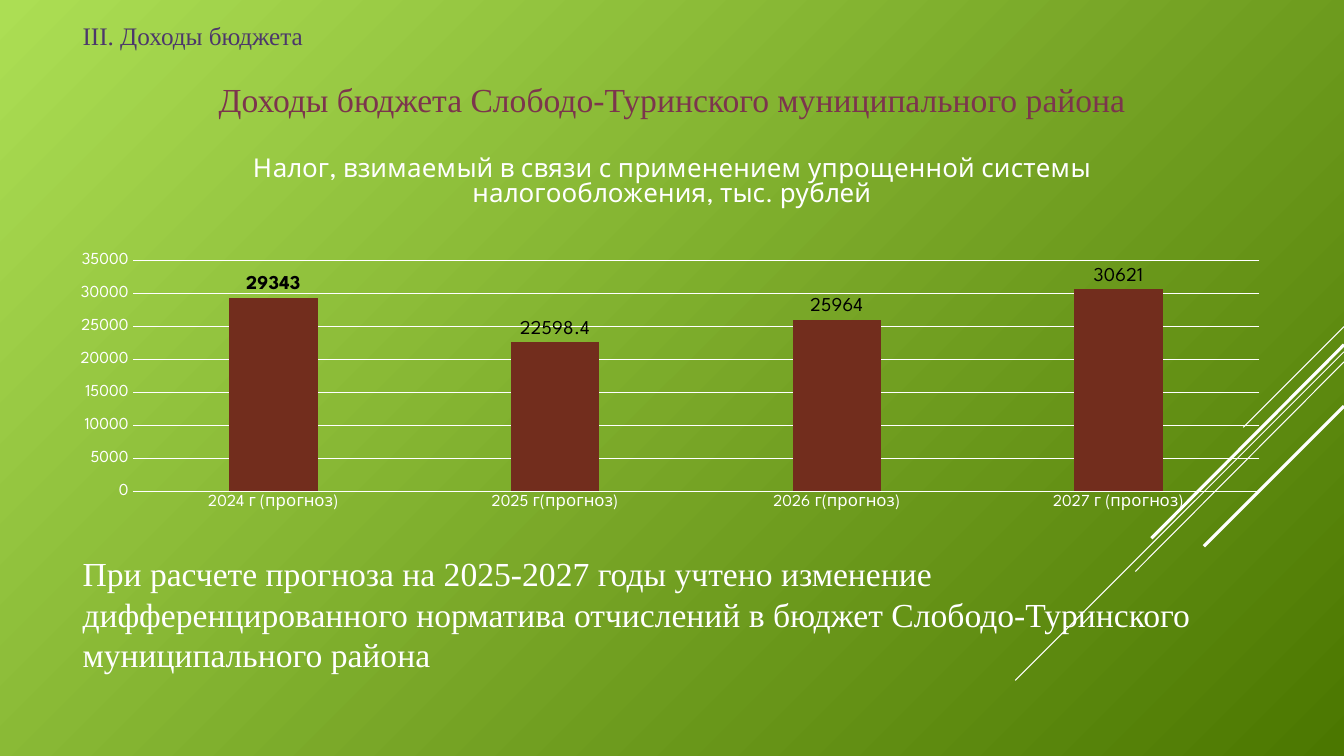
from lxml.etree import SubElement
from pptx import Presentation
from pptx.chart.data import CategoryChartData
from pptx.dml.color import RGBColor
from pptx.enum.chart import XL_CHART_TYPE, XL_LABEL_POSITION, XL_TICK_MARK
from pptx.enum.shapes import MSO_CONNECTOR
from pptx.enum.text import MSO_ANCHOR, PP_ALIGN
from pptx.oxml import parse_xml
from pptx.oxml.ns import nsdecls, qn
from pptx.util import Inches, Pt

# Content
SECTION = "III. Доходы бюджета"
HEADING = "Доходы бюджета Слободо-Туринского муниципального района"
CHART_TITLE = ("Налог, взимаемый в связи с применением упрощенной "
               "системы налогообложения, тыс. рублей")
NOTE = ("При расчете прогноза на 2025-2027 годы учтено изменение "
        "дифференцированного норматива отчислений в бюджет "
        "Слободо-Туринского муниципального района")
TAX_FORECAST = {
    "2024 г (прогноз)": 29343,
    "2025 г(прогноз)": 22598.4,
    "2026 г(прогноз)": 25964,
    "2027 г (прогноз)": 30621,
}

# Diagonal rays from the right edge: start height, end x, end y, width in points
RAYS = [
    (3.24, 12.33, 4.24, 0.75),
    (3.49, 10.07, 6.75, 0.75),
    (3.59, 11.26, 5.67, 0.75),
    (3.42, 11.42, 5.34, 2.25),
    (4.03, 11.94, 5.42, 2.25),
]

# Style
WHITE = RGBColor(0xFF, 0xFF, 0xFF)
BLACK = RGBColor(0, 0, 0)
LIGHT_GREEN = RGBColor(0xAC, 0xDE, 0x54)
DARK_GREEN = RGBColor(0x4B, 0x77, 0x00)
BRICK = RGBColor(0x72, 0x2D, 0x1D)
PURPLE = RGBColor(0x4C, 0x37, 0x6B)
PLUM = RGBColor(0x7C, 0x35, 0x4D)
CHART_FONT = "League Spartan"
TEXT_FONT = "Times New Roman"
SLIDE_WIDTH, SLIDE_HEIGHT = 13.33, 7.5
LEFT, WIDTH = 0.72, 11.89
PLOT_LAYOUT = {"x": 0.05, "y": 0.31, "w": 0.94, "h": 0.58}


def style_font(font, size, color, name=CHART_FONT, bold=False):
    font.size = Pt(size)
    font.name = name
    font.bold = bold
    font.color.rgb = color


def add_text(slide, text, top, height, size=24, color=WHITE,
             align=PP_ALIGN.LEFT, anchor=MSO_ANCHOR.MIDDLE):
    box = slide.shapes.add_textbox(Inches(LEFT), Inches(top), Inches(WIDTH), Inches(height))
    frame = box.text_frame
    frame.word_wrap = True
    frame.vertical_anchor = anchor
    paragraph = frame.paragraphs[0]
    paragraph.alignment = align
    run = paragraph.add_run()
    run.text = text
    style_font(run.font, size, color, TEXT_FONT)


def add_ray(slide, start_y, end_x, end_y, width):
    ray = slide.shapes.add_connector(
        MSO_CONNECTOR.STRAIGHT, Inches(SLIDE_WIDTH), Inches(start_y),
        Inches(end_x), Inches(end_y))
    ray.line.color.rgb = WHITE
    ray.line.width = Pt(width)
    SubElement(ray.element.spPr, qn("a:effectLst"))


def style_axis(axis):
    style_font(axis.tick_labels.font, 12, WHITE)
    axis.major_tick_mark = XL_TICK_MARK.NONE
    axis.minor_tick_mark = XL_TICK_MARK.NONE


def add_tax_chart(slide):
    data = CategoryChartData()
    data.categories = list(TAX_FORECAST)
    data.add_series(CHART_TITLE, list(TAX_FORECAST.values()))
    chart = slide.shapes.add_chart(
        XL_CHART_TYPE.COLUMN_CLUSTERED, Inches(LEFT), Inches(1.36),
        Inches(WIDTH), Inches(3.95), data).chart
    style_font(chart.font, 10, BLACK)
    chart.has_legend = False

    # Title
    chart.has_title = True
    title = chart.chart_title.text_frame
    title.text = CHART_TITLE
    style_font(title.paragraphs[0].runs[0].font, 18.5, WHITE)

    # Axes
    category_axis, value_axis = chart.category_axis, chart.value_axis
    style_axis(category_axis)
    style_axis(value_axis)
    value_axis.minimum_scale, value_axis.maximum_scale = 0, 35000
    value_axis.major_unit = 5000
    value_axis.format.line.fill.background()
    for line in (category_axis.format.line, value_axis.major_gridlines.format.line):
        line.color.rgb = WHITE
        line.width = Pt(0.75)

    # Columns and their labels, the first one bold
    plot = chart.plots[0]
    plot.gap_width, plot.overlap = 219, -27
    plot.vary_by_categories = False
    series = plot.series[0]
    series.format.fill.solid()
    series.format.fill.fore_color.rgb = BRICK
    series.data_labels.show_value = True
    series.data_labels.position = XL_LABEL_POSITION.OUTSIDE_END
    style_font(series.data_labels.font, 14, BLACK, bold=True)
    for index in range(1, len(TAX_FORECAST)):
        label = series.points[index].data_label
        style_font(label.font, 14, BLACK)
        label.position = XL_LABEL_POSITION.OUTSIDE_END

    # Fixed inner plot area
    plot_area = chart.element.find(".//" + qn("c:plotArea"))
    for old_layout in plot_area.findall(qn("c:layout")):
        plot_area.remove(old_layout)
    settings = {"layoutTarget": "inner", "xMode": "edge", "yMode": "edge", **PLOT_LAYOUT}
    entries = "".join(f'<c:{key} val="{value}"/>' for key, value in settings.items())
    plot_area.insert(0, parse_xml(
        f'<c:layout {nsdecls("c")}><c:manualLayout>{entries}</c:manualLayout></c:layout>'))


def main():
    presentation = Presentation()
    presentation.slide_width = Inches(SLIDE_WIDTH)
    presentation.slide_height = Inches(SLIDE_HEIGHT)
    slide = presentation.slides.add_slide(presentation.slide_layouts[6])

    # Background running from the top left to the bottom right
    background = slide.background.fill
    background.gradient()
    background.gradient_angle = 315
    for stop, color in zip(background.gradient_stops, (LIGHT_GREEN, DARK_GREEN)):
        stop.color.rgb = color

    for ray in RAYS:
        add_ray(slide, *ray)
    add_tax_chart(slide)
    add_text(slide, SECTION, 0.19, 0.32, size=18, color=PURPLE)
    add_text(slide, HEADING, 0.73, 0.5, color=PLUM,
             align=PP_ALIGN.CENTER, anchor=MSO_ANCHOR.TOP)
    add_text(slide, NOTE, 5.42, 1.34)
    presentation.save("out.pptx")


if __name__ == "__main__":
    main()
